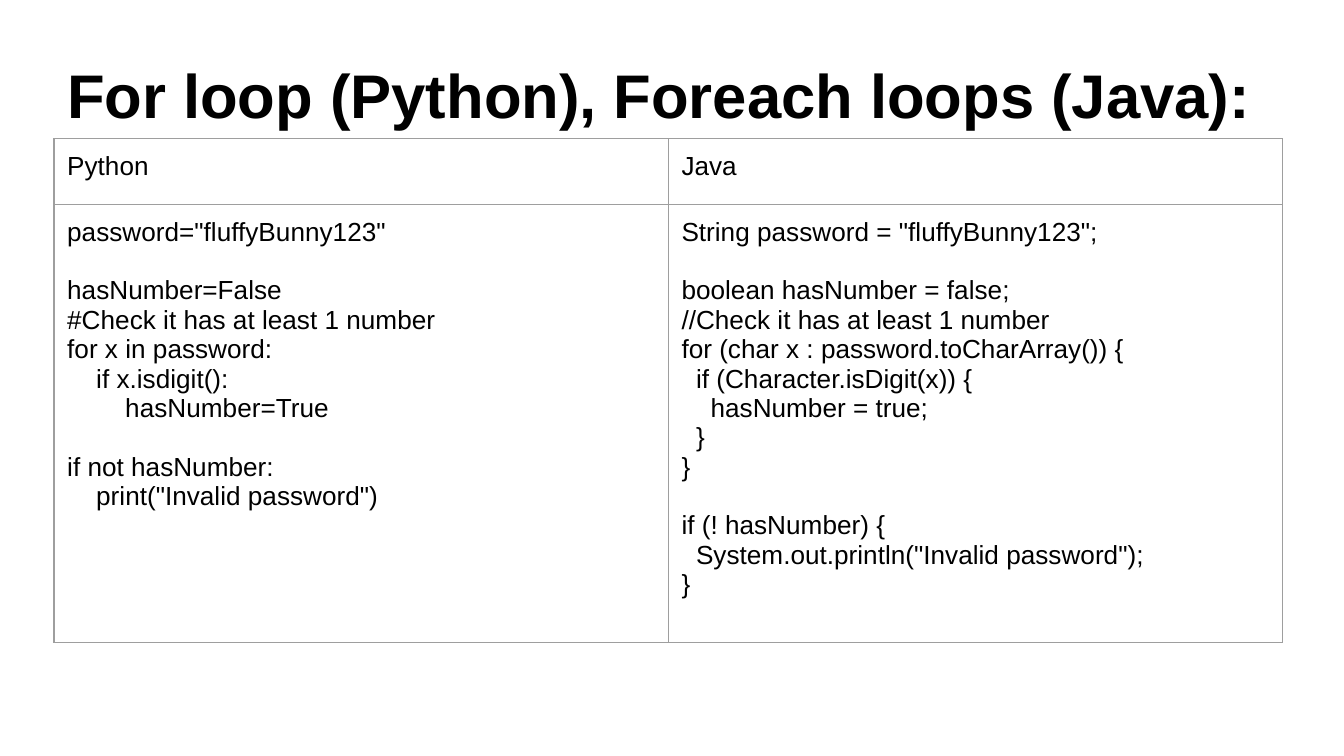
from dataclasses import dataclass

from lxml import etree
from pptx import Presentation
from pptx.dml.color import RGBColor
from pptx.enum import text
from pptx.oxml import ns
from pptx.util import Cm, Pt


@dataclass(frozen=True)
class Theme:
    font: str = "Arial"
    ink: str = "000000"
    rule: str = "9E9E9E"
    background: str = "FFFFFF"
    title_size: float = 33
    code_size: float = 14
    code_gap: float = 15.75
    rule_width: float = 0.75


@dataclass(frozen=True)
class Box:
    left: int
    top: int
    width: int
    height: int


THEME = Theme()
TITLE = "For loop (Python), Foreach loops (Java):"
PYTHON_CODE = """password="fluffyBunny123"

hasNumber=False
#Check it has at least 1 number
for x in password:
    if x.isdigit():
        hasNumber=True

if not hasNumber:
    print("Invalid password")"""
JAVA_CODE = """String password = "fluffyBunny123";

boolean hasNumber = false;
//Check it has at least 1 number
for (char x : password.toCharArray()) {
  if (Character.isDigit(x)) {
    hasNumber = true;
  }
}

if (! hasNumber) {
  System.out.println("Invalid password");
}"""
COMPARISON = [("Python", "Java"), (PYTHON_CODE, JAVA_CODE)]


def style_paragraph(para, size, bold):
    para.alignment = text.PP_ALIGN.LEFT
    for span in para.runs:
        span.font.name = THEME.font
        span.font.size = Pt(size)
        span.font.bold = bold
        span.font.color.rgb = RGBColor.from_string(THEME.ink)


def add_title(page, box):
    title = page.shapes.title
    title.left, title.top = box.left, box.top
    title.width, title.height = box.width, box.height
    frame = title.text_frame
    frame.text = TITLE
    frame.word_wrap = True
    frame.auto_size = text.MSO_AUTO_SIZE.NONE
    frame.vertical_anchor = text.MSO_ANCHOR.MIDDLE
    frame.margin_left = frame.margin_right = Cm(0.25)
    frame.margin_top = frame.margin_bottom = Cm(0.13)
    para = frame.paragraphs[0]
    para.line_spacing = 0.9
    style_paragraph(para, THEME.title_size, True)


def add_borders(cell):
    properties = cell._tc.get_or_add_tcPr()
    for index, side in enumerate(("lnL", "lnR", "lnT", "lnB")):
        line = etree.Element(ns.qn(f"a:{side}"), w=str(Pt(THEME.rule_width)))
        fill = etree.SubElement(line, ns.qn("a:solidFill"))
        etree.SubElement(fill, ns.qn("a:srgbClr"), val=THEME.rule)
        properties.insert(index, line)


def fill_cell(cell, code):
    cell.margin_left = cell.margin_right = Cm(0.25)
    cell.margin_top = cell.margin_bottom = Cm(0.25)
    cell.vertical_anchor = text.MSO_ANCHOR.TOP
    cell.fill.background()
    add_borders(cell)
    blocks = [block.split("\n") for block in code.split("\n\n")]
    cell.text_frame.text = "\n".join(line for block in blocks for line in block)
    paragraphs = iter(cell.text_frame.paragraphs)
    for block_index, block in enumerate(blocks):
        for line_index in range(len(block)):
            para = next(paragraphs)
            if block_index and not line_index:
                para.space_before = Pt(THEME.code_gap)
            style_paragraph(para, THEME.code_size, False)


def add_comparison(page, box):
    frame = page.shapes.add_table(2, 2, box.left, box.top, box.width, box.height)
    table = frame.table
    table.first_row = False
    table.horz_banding = False
    header_height = Cm(1.24)
    table.rows[0].height = header_height
    table.rows[1].height = box.height - header_height
    for row, codes in zip(table.rows, COMPARISON):
        for cell, code in zip(row.cells, codes):
            fill_cell(cell, code)


def main():
    deck = Presentation()
    deck.slide_width, deck.slide_height = Cm(25.4), Cm(14.29)
    page = deck.slides.add_slide(deck.slide_layouts[5])
    page.background.fill.solid()
    page.background.fill.fore_color.rgb = RGBColor.from_string(THEME.background)
    add_title(page, Box(Cm(1.02), Cm(1.07), Cm(23.39), Cm(1.6)))
    add_comparison(page, Box(Cm(1.02), Cm(2.62), Cm(23.22), Cm(9.52)))
    deck.save("out.pptx")


if __name__ == "__main__":
    main()
